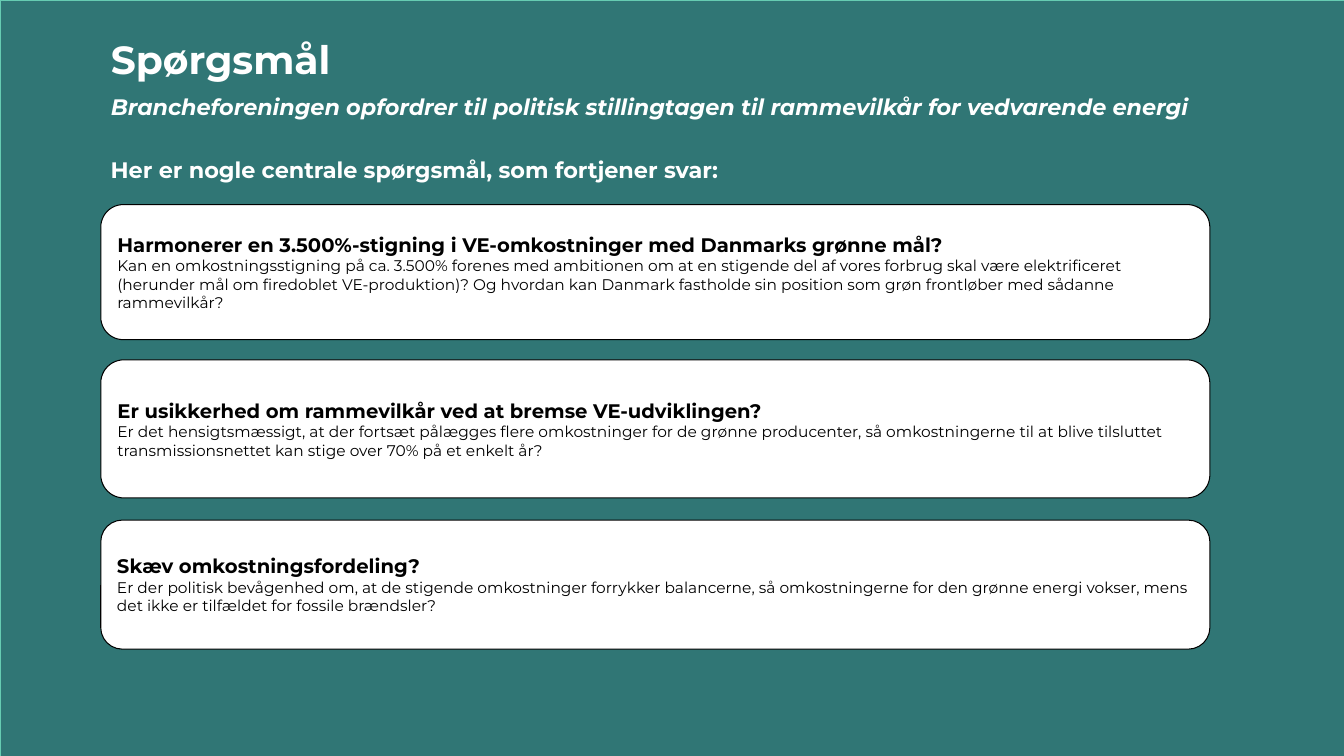
from pptx import Presentation
from pptx.dml.color import RGBColor
from pptx.enum.shapes import MSO_SHAPE as SHAPE
from pptx.enum.text import MSO_ANCHOR as ANCHOR, MSO_AUTO_SIZE as AUTO, PP_ALIGN as ALIGN
from pptx.util import Inches, Pt

GREEN = RGBColor(0x30, 0x76, 0x75)
MINT = RGBColor(0x66, 0xCC, 0xB2)
WHITE = RGBColor(0xFF, 0xFF, 0xFF)
BLACK = RGBColor(0, 0, 0)
FONT = "Montserrat"
LEFT, WIDTH = 1, 11

QUESTIONS = [
    (2.03, 1.34,
     "Harmonerer en 3.500%-stigning i VE-omkostninger med Danmarks grønne mål?",
     "Kan en omkostningsstigning på ca. 3.500% forenes med ambitionen om at en stigende del af "
     "vores forbrug skal være elektrificeret (herunder mål om firedoblet VE-produktion)? Og "
     "hvordan kan Danmark fastholde sin position som grøn frontløber med sådanne rammevilkår?"),
    (3.57, 1.37,
     "Er usikkerhed om rammevilkår ved at bremse VE-udviklingen?",
     "Er det hensigtsmæssigt, at der fortsæt pålægges flere omkostninger for de grønne "
     "producenter, så omkostningerne til at blive tilsluttet transmissionsnettet kan stige "
     "over 70% på et enkelt år?"),
    (5.16, 1.28,
     "Skæv omkostningsfordeling?",
     "Er der politisk bevågenhed om, at de stigende omkostninger forrykker balancerne, så "
     "omkostningerne for den grønne energi vokser, mens det ikke er tilfældet for fossile "
     "brændsler?"),
]


def write(p, text, size, color, bold=False, italic=False):
    p.text = text
    p.alignment = ALIGN.LEFT
    p.font.name = FONT
    p.font.size = Pt(size)
    p.font.color.rgb = color
    p.font.bold = bold
    p.font.italic = italic


def add_panel(slide, kind, left, top, width, height, fill, line, weight):
    sp = slide.shapes.add_shape(kind, Inches(left), Inches(top), Inches(width), Inches(height))
    sp.shadow.inherit = False
    sp.fill.solid()
    sp.fill.fore_color.rgb = fill
    sp.line.color.rgb = line
    sp.line.width = Pt(weight)
    return sp


def add_background(slide):
    sp = add_panel(slide, SHAPE.RECTANGLE, 0, 0, 13.33, 7.5, GREEN, MINT, 0.5)
    slide.shapes._spTree.insert(2, sp._element)


def set_title(slide, text):
    sp = slide.shapes.title
    sp.left, sp.top = Inches(LEFT), Inches(0.3)
    sp.width, sp.height = Inches(WIDTH), Inches(0.57)
    tf = sp.text_frame
    tf.word_wrap = True
    tf.auto_size = AUTO.NONE
    tf.vertical_anchor = ANCHOR.TOP
    write(tf.paragraphs[0], text, 28, WHITE, bold=True)


def add_heading(slide, top, width, text, italic=False):
    sp = slide.shapes.add_textbox(Inches(LEFT), Inches(top), Inches(width), Inches(0.37))
    tf = sp.text_frame
    tf.word_wrap = True
    write(tf.paragraphs[0], text, 16, WHITE, bold=True, italic=italic)


def add_question(slide, top, height, question, detail):
    sp = add_panel(slide, SHAPE.ROUNDED_RECTANGLE, LEFT, top, WIDTH, height, WHITE, BLACK, 0.75)
    tf = sp.text_frame
    tf.word_wrap = True
    tf.vertical_anchor = ANCHOR.MIDDLE
    write(tf.paragraphs[0], question, 14, BLACK, bold=True)
    write(tf.add_paragraph(), detail, 11, BLACK)


def main():
    prs = Presentation()
    prs.slide_width, prs.slide_height = Inches(13.33), Inches(7.5)
    slide = prs.slides.add_slide(prs.slide_layouts[5])
    add_background(slide)
    set_title(slide, "Spørgsmål")
    add_heading(slide, 0.87, 11.55,
                "Brancheforeningen opfordrer til politisk stillingtagen til rammevilkår "
                "for vedvarende energi", italic=True)
    add_heading(slide, 1.5, WIDTH, "Her er nogle centrale spørgsmål, som fortjener svar:")
    for question in QUESTIONS:
        add_question(slide, *question)
    prs.save("out.pptx")


if __name__ == "__main__":
    main()
